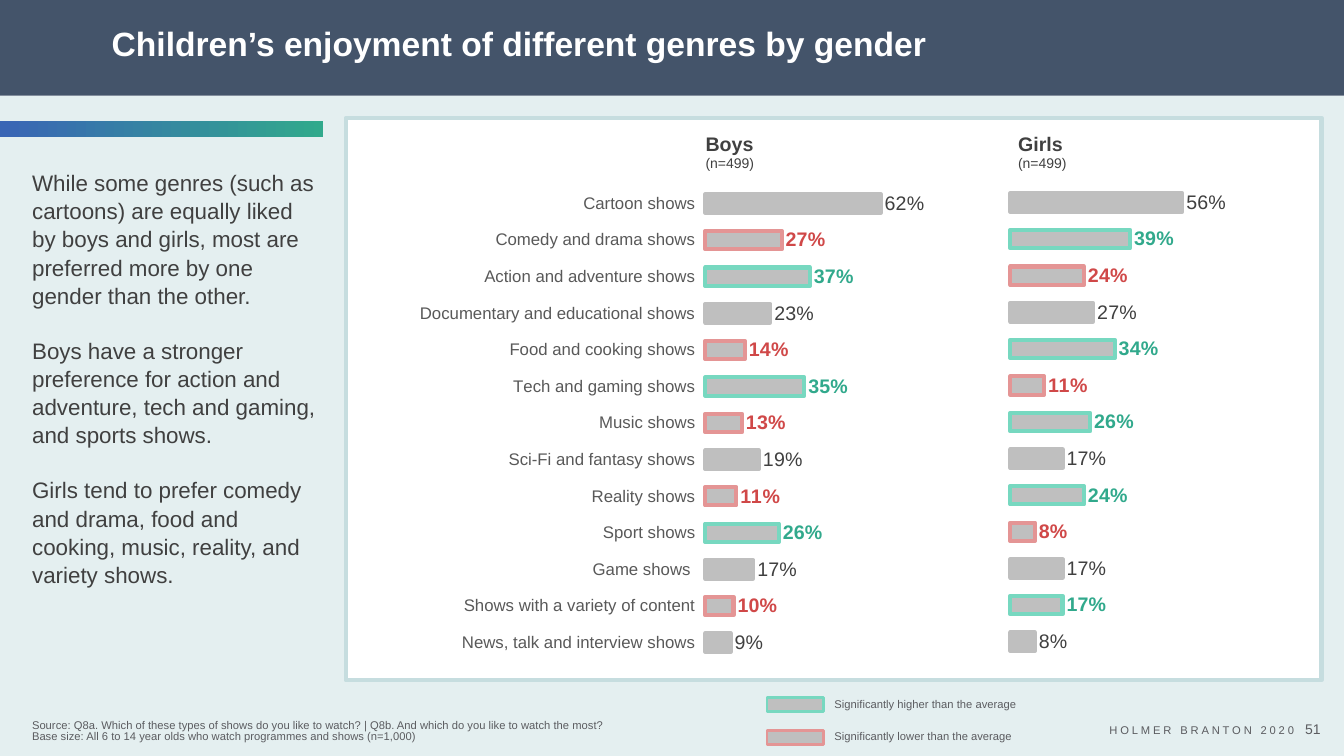
"""Build the slide on children's enjoyment of genres by gender."""
from lxml.etree import SubElement
from pptx import Presentation
from pptx.chart.data import CategoryChartData
from pptx.dml.color import RGBColor
from pptx.enum.chart import XL_CHART_TYPE, XL_LABEL_POSITION, XL_TICK_LABEL_POSITION, XL_TICK_MARK
from pptx.enum.shapes import MSO_SHAPE
from pptx.enum.text import MSO_ANCHOR, PP_ALIGN
from pptx.oxml import parse_xml
from pptx.oxml.ns import nsdecls, qn
from pptx.util import Pt

TITLE = "Children’s enjoyment of different genres by gender"
FINDINGS = [
    "While some genres (such as cartoons) are equally liked by boys and girls, "
    "most are preferred more by one gender than the other.",
    "Boys have a stronger preference for action and adventure, tech and gaming, and sports shows.",
    "Girls tend to prefer comedy and drama, food and cooking, music, reality, and variety shows.",
]
GENRES = [
    ("Cartoon shows", 0.62, 0.56, ""),
    ("Comedy and drama shows", 0.27, 0.39, "Girls"),
    ("Action and adventure shows", 0.37, 0.24, "Boys"),
    ("Documentary and educational shows", 0.23, 0.27, ""),
    ("Food and cooking shows", 0.14, 0.34, "Girls"),
    ("Tech and gaming shows", 0.35, 0.11, "Boys"),
    ("Music shows", 0.13, 0.26, "Girls"),
    ("Sci-Fi and fantasy shows", 0.19, 0.17, ""),
    ("Reality shows", 0.11, 0.24, "Girls"),
    ("Sport shows", 0.26, 0.08, "Boys"),
    ("Game shows ", 0.17, 0.17, ""),
    ("Shows with a variety of content", 0.1, 0.17, "Girls"),
    ("News, talk and interview shows", 0.09, 0.08, ""),
]
GROUPS = [("Boys", "(n=499)"), ("Girls", "(n=499)")]
SOURCE = [
    "Source: Q8a. Which of these types of shows do you like to watch? | "
    "Q8b. And which do you like to watch the most?",
    "Base size: All 6 to 14 year olds who watch programmes and shows (n=1,000)",
]
LEGEND = ["Significantly higher than the average", "Significantly lower than the average"]
FOOTER, PAGE = "HOLMER BRANTON 2020", "51"

BAR, DARK, MUTED = "BFBFBF", "404040", "5B5C60"
OUTLINES = {"higher": "77D8C0", "lower": "E49595"}
LABELS = {"higher": "31A98C", "lower": "D04848"}
PLOTS = {
    "Boys": ((-5, 108, 697, 386.6), (0.73, 0.063, 0.232, 0.879)),
    "Girls": ((200.9, 107.3, 731.5, 386.6), (0.712, 0.063, 0.24, 0.879)),
}


def rgb(value):
    return RGBColor.from_string(value)


def style(font, size, color, bold=False):
    for key, val in {"name": "Arial", "size": Pt(size), "bold": bold}.items():
        setattr(font, key, val)
    font.color.rgb = rgb(color)


def add_box(s, at, fill, line=None, width=0):
    sp = s.shapes.add_shape(MSO_SHAPE.RECTANGLE, *map(Pt, at))
    sp.shadow.inherit = False
    sp.fill.solid()
    sp.fill.fore_color.rgb = rgb(fill)
    if line:
        sp.line.color.rgb, sp.line.width = rgb(line), Pt(width)
    else:
        sp.line.fill.background()
    return sp


def add_text(s, at, lines, size, color, bold=False, gap=0, indent=0, **fmt):
    tf = s.shapes.add_textbox(*map(Pt, at)).text_frame
    tf.word_wrap, tf.vertical_anchor = True, MSO_ANCHOR.MIDDLE
    for i, line in enumerate(lines):
        p = tf.paragraphs[0] if i == 0 else tf.add_paragraph()
        for key, val in fmt.items():
            setattr(p, key, val)
        if i and gap:
            p.space_before = Pt(gap)
        if indent:
            p._p.get_or_add_pPr().set("marL", str(Pt(indent)))
        r = p.add_run()
        r.text = line
        style(r.font, size, color, bold)
    return tf


def set_plot(chart, layout):
    area = chart._chartSpace.chart.plotArea
    for old in area.findall(qn("c:layout")):
        area.remove(old)
    node = parse_xml(f"<c:layout {nsdecls('c')}><c:manualLayout/></c:layout>")
    tags = ["layoutTarget", "xMode", "yMode", "x", "y", "w", "h"]
    for tag, val in zip(tags, ["inner", "edge", "edge", *layout]):
        SubElement(node[0], qn("c:" + tag)).set("val", str(val))
    area.insert(0, node)
    clear = f"<c:spPr {nsdecls('c', 'a')}><a:noFill/><a:ln><a:noFill/></a:ln></c:spPr>"
    area.append(parse_xml(clear))
    chart._chartSpace.chart.addnext(parse_xml(clear))


def add_bars(s, group, names, values):
    at, layout = PLOTS[group]
    data = CategoryChartData(number_format="0%")
    data.categories = names
    data.add_series(group, values)
    chart = s.shapes.add_chart(XL_CHART_TYPE.BAR_CLUSTERED, *map(Pt, at), data).chart
    chart.has_legend = chart.has_title = False
    style(chart.font, 10, "000000")
    set_plot(chart, layout)

    cat, val = chart.category_axis, chart.value_axis
    for key, setting in {"reverse_order": True, "has_major_gridlines": False,
                         "major_tick_mark": XL_TICK_MARK.NONE,
                         "tick_label_position": XL_TICK_LABEL_POSITION.LOW,
                         "visible": group == "Boys"}.items():
        setattr(cat, key, setting)
    style(cat.tick_labels.font, 12, "595959")
    cat.format.line.fill.background()
    for key, setting in {"minimum_scale": 0, "maximum_scale": 0.8,
                         "has_major_gridlines": False, "visible": False}.items():
        setattr(val, key, setting)

    plot = chart.plots[0]
    plot.gap_width, plot.vary_by_categories = 100, False
    series = plot.series[0]
    paint(series.format, BAR)
    labels = series.data_labels
    for key, setting in {"show_value": True, "number_format": "0%",
                         "number_format_is_linked": False,
                         "position": XL_LABEL_POSITION.OUTSIDE_END}.items():
        setattr(labels, key, setting)
    style(labels.font, 14, DARK)
    for i, (*_, favoured) in enumerate(GENRES):
        if favoured:
            level = "higher" if favoured == group else "lower"
            point = series.points[i]
            paint(point.format, OUTLINES[level])
            style(point.data_label.font, 14, LABELS[level], True)
            point.data_label.position = XL_LABEL_POSITION.OUTSIDE_END


def paint(fmt, outline):
    fmt.fill.solid()
    fmt.fill.fore_color.rgb = rgb(BAR)
    fmt.line.color.rgb, fmt.line.width = rgb(outline), Pt(3)


def add_heads(s):
    table = s.shapes.add_table(1, 3, Pt(496.8), Pt(92.2), Pt(481.7), Pt(29.5)).table
    table.first_row = table.horz_banding = False
    table._tbl.tblPr.find(qn("a:tableStyleId")).text = "{2D5ABB26-0587-4C30-8999-92F81FD0307C}"
    for col, width in zip(table.columns, [223.2, 97.9, 160.6]):
        col.width = Pt(width)
    for cell in table.rows[0].cells:
        cell.fill.background()
    for i, (name, base) in enumerate(GROUPS):
        tf = table.cell(0, i).text_frame
        tf.text = f"{name}\n{base}"
        style(tf.paragraphs[0].runs[0].font, 14, DARK, True)
        style(tf.paragraphs[1].runs[0].font, 10, DARK)


def main():
    prs = Presentation()
    prs.slide_width, prs.slide_height = Pt(960), Pt(540)
    s = prs.slides.add_slide(prs.slide_layouts[6])
    add_box(s, (0, 68.4, 960, 471.6), "E4EFF0")
    add_box(s, (0, 0, 960, 68.4), "44546A")
    tf = add_text(s, (770.4, 507.6, 161.3, 28), [FOOTER], 8, MUTED, alignment=PP_ALIGN.RIGHT)
    tf.paragraphs[0].runs[0].font._element.set("spc", "200")
    add_text(s, (917.3, 511.2, 33.1, 19.4), [PAGE], 10, MUTED, alignment=PP_ALIGN.RIGHT)
    add_box(s, (247, 84.2, 697, 401.8), "FFFFFF", "C6DDDF", 3)

    names, boys, girls, _ = zip(*GENRES)
    add_bars(s, "Boys", names, boys)
    add_text(s, (72.7, 10.8, 725.8, 43.2), [TITLE], 24, "FFFFFF", True, line_spacing=0.9)
    add_text(s, (15.8, 505.4, 596.9, 34.6), SOURCE, 8, MUTED, line_spacing=0.8)
    add_text(s, (13, 115.2, 220.3, 309.6), FINDINGS, 16, DARK,
             gap=19.2, indent=2.9, line_spacing=1.05)
    add_heads(s)
    for i, outline in enumerate(OUTLINES.values()):
        add_box(s, (547.9, 498.2 + i * 23.4, 40.3, 10.1), BAR, outline, 2)
    add_text(s, (589, 496.8, 148.3, 36.7), LEGEND, 8, MUTED, gap=15, line_spacing=0.8)

    accent = add_box(s, (0, 86.2, 231, 11.7), "3965B5")
    accent.fill.gradient()
    accent.fill.gradient_angle = 0
    for stop, color in zip(accent.fill.gradient_stops, ["3965B5", "31A98C"]):
        stop.color.rgb = rgb(color)
    add_bars(s, "Girls", [str(n + 1) for n in range(len(GENRES))], girls)
    prs.save("out.pptx")


if __name__ == "__main__":
    main()
